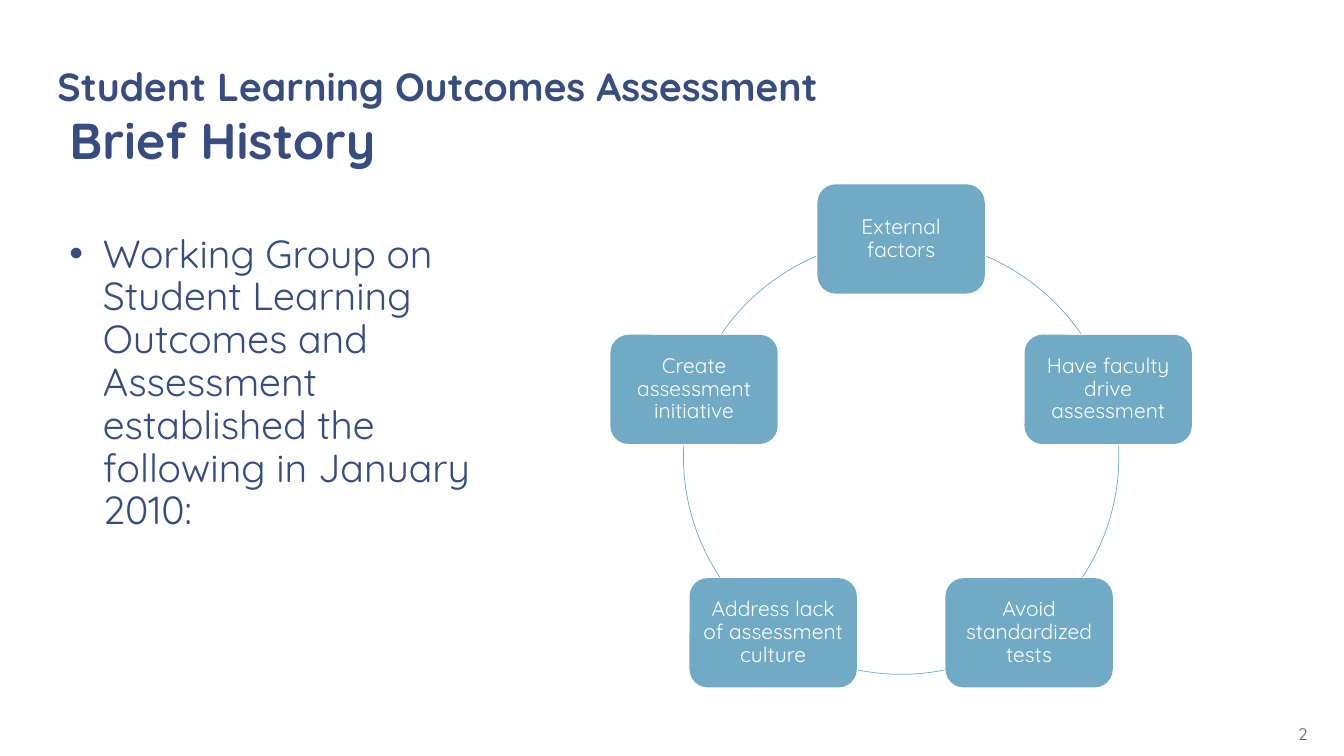
from math import cos, radians, sin
from pptx import Presentation
from pptx.dml.color import RGBColor
from pptx.enum.shapes import MSO_SHAPE as Kind
from pptx.enum.text import MSO_ANCHOR as Anchor, MSO_AUTO_SIZE as Fit, PP_ALIGN as Align
from pptx.oxml import parse_xml
from pptx.oxml.ns import nsdecls
from pptx.util import Pt

# Content
HEAD = "Student Learning Outcomes Assessment"
TITLE = "Brief History"
POINT = ("Working Group on Student Learning Outcomes and Assessment "
         "established the following in January 2010:")
PAGE = "2"
STEPS = ["External factors", "Have faculty drive assessment",
         "Avoid standardized tests", "Address lack of assessment culture",
         "Create assessment initiative"]
# Clockwise degrees from three o'clock, start and end of each arc
ARCS = [(293, 325.6), (357.1, 33.7), (78.5, 101.5), (146.3, 182.9), (214.4, 247)]

FONT, NAVY, GREY, BLUE, WHITE = "Quicksand", "374C81", "54618B", "70AAC4", "FFFFFF"
MID_X, MID_Y, RADIUS = 643.7, 326.2, 155.5
NODE_W, NODE_H = 119.5, 78


def color(code):
    return RGBColor.from_string(code)


def write(shape, text, size, tint=NAVY, bold=False, align=Align.LEFT,
          anchor=Anchor.TOP, gap=0.95, pads=(9, 5, 9, 5)):
    frame = shape.text_frame
    frame.text = text
    frame.word_wrap = True
    frame.auto_size = Fit.NONE
    frame.vertical_anchor = anchor
    (frame.margin_left, frame.margin_top,
     frame.margin_right, frame.margin_bottom) = map(Pt, pads)
    para = frame.paragraphs[0]
    para.alignment, para.line_spacing = align, gap
    font = para.runs[0].font
    font.name, font.size, font.bold = FONT, Pt(size), bold
    font.color.rgb = color(tint)
    return para


def place(box):
    return [Pt(v) for v in box]


deck = Presentation()
deck.slide_width, deck.slide_height = Pt(960), Pt(540)
slide = deck.slides.add_slide(deck.slide_layouts[5])
shapes = slide.shapes

# Title and the line above it
title = shapes.title
title.left, title.top, title.width, title.height = place((40.5, 78, 880, 48))
write(title, TITLE, 36, bold=True, anchor=Anchor.BOTTOM, gap=0.85)
head = shapes.add_textbox(*place((32, 42, 896, 30)))
write(head, HEAD, 28, bold=True)

# Bulleted text
body = shapes.add_textbox(*place((40.5, 162, 312, 328)))
para = write(body, POINT, 28, gap=0.91)
props = para._p.get_or_add_pPr()
props.set("marL", str(Pt(24)))
props.set("indent", str(Pt(-24)))
props.append(parse_xml(f'<a:buFont {nsdecls("a")} typeface="Arial"/>'))
props.append(parse_xml(f'<a:buChar {nsdecls("a")} char="•"/>'))

# Cycle: a node every 72 degrees from the top, each followed by its arc
for i, (step, arc) in enumerate(zip(STEPS, ARCS)):
    turn = radians(i * 360 / len(STEPS) - 90)
    x, y = MID_X + RADIUS * cos(turn), MID_Y + RADIUS * sin(turn)
    node = shapes.add_shape(Kind.ROUNDED_RECTANGLE, *place(
        (x - NODE_W / 2, y - NODE_H / 2, NODE_W, NODE_H)))
    node.shadow.inherit = False
    node.fill.solid()
    node.fill.fore_color.rgb = color(BLUE)
    node.line.fill.background()
    write(node, step, 15, WHITE, align=Align.CENTER, anchor=Anchor.MIDDLE,
          gap=0.9, pads=(4, 4, 4, 4))

    link = shapes.add_shape(Kind.ARC, *place(
        (MID_X - RADIUS, MID_Y - RADIUS, 2 * RADIUS, 2 * RADIUS)))
    link.shadow.inherit = False
    link.fill.background()
    link.line.color.rgb = color(BLUE)
    link.line.width = Pt(0.5)
    for k, angle in enumerate(arc):
        link.adjustments[k] = angle * 0.6  # 60000 units a degree, over 100000

# Page number
page = shapes.add_textbox(*place((864, 510, 77, 21.5)))
write(page, PAGE, 12, GREY, align=Align.RIGHT, anchor=Anchor.BOTTOM,
      gap=1.0, pads=(7, 3.5, 7, 0))

deck.save("out.pptx")
